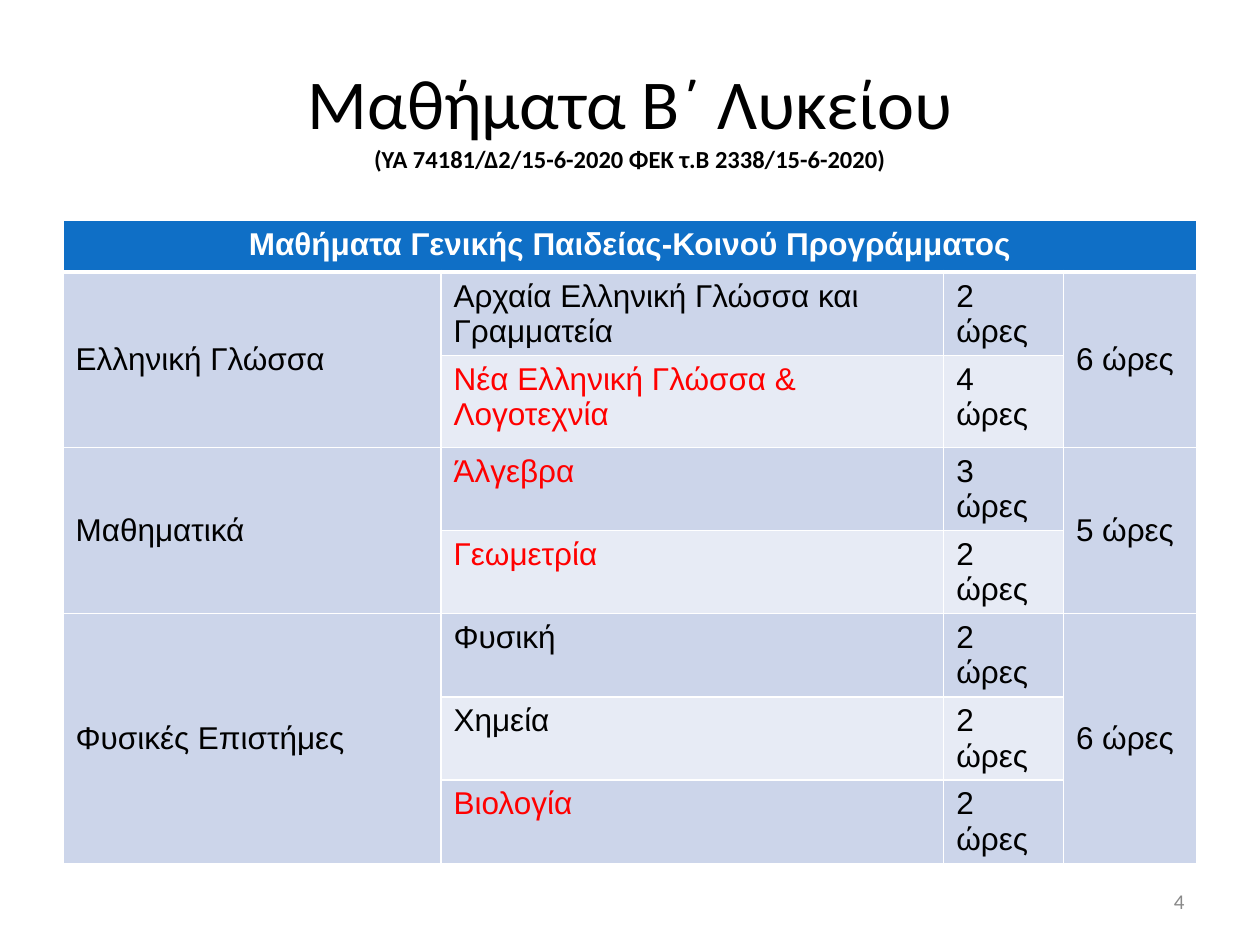
from lxml import etree
from pptx import Presentation
from pptx.dml.color import RGBColor
from pptx.enum.text import MSO_ANCHOR, PP_ALIGN
from pptx.oxml.ns import qn
from pptx.util import Inches, Pt

CENTER, RIGHT = PP_ALIGN.CENTER, PP_ALIGN.RIGHT
TOP, MIDDLE = MSO_ANCHOR.TOP, MSO_ANCHOR.MIDDLE

BLACK = RGBColor(0x00, 0x00, 0x00)
WHITE = RGBColor(0xFF, 0xFF, 0xFF)
RED = RGBColor(0xFF, 0x00, 0x00)
GRAY = RGBColor(0x89, 0x89, 0x89)
HEADER_BLUE = RGBColor(0x0F, 0x6F, 0xC6)
BAND_DARK = RGBColor(0xCC, 0xD5, 0xEA)
BAND_LIGHT = RGBColor(0xE7, 0xEB, 0xF5)

COLUMN_WIDTHS = [3, 3.99, 0.95, 1.06]
ROW_HEIGHTS = [0.41, 0.5, 0.73] + [0.41] * 5

# Subject area, total hours, courses (name, hours, colour)
SUBJECT_AREAS = [
    ("Ελληνική Γλώσσα", "6 ώρες", [
        ("Αρχαία Ελληνική Γλώσσα και Γραμματεία", "2 ώρες", BLACK),
        ("Νέα Ελληνική Γλώσσα & Λογοτεχνία", "4 ώρες", RED)]),
    ("Μαθηματικά", "5 ώρες", [
        ("Άλγεβρα", "3 ώρες", RED),
        ("Γεωμετρία", "2 ώρες", RED)]),
    ("Φυσικές Επιστήμες", "6 ώρες", [
        ("Φυσική", "2 ώρες", BLACK),
        ("Χημεία", "2 ώρες", BLACK),
        ("Βιολογία", "2 ώρες", RED)]),
]


def add_text(paragraph, text, size, color, font="Calibri", bold=False):
    run = paragraph.add_run()
    run.text = text
    font_format = {"name": font, "size": Pt(size), "bold": bold}
    for attribute, value in font_format.items():
        setattr(run.font, attribute, value)
    run.font.color.rgb = color


def format_cell(cell, fill, bottom_width=1):
    """Fill the cell and give it white borders."""
    cell.fill.solid()
    cell.fill.fore_color.rgb = fill
    properties = cell._tc.get_or_add_tcPr()
    widths = {"a:lnL": 1, "a:lnR": 1, "a:lnT": 1, "a:lnB": bottom_width}
    for position, (side, width) in enumerate(widths.items()):
        line = etree.Element(qn(side), w=str(Pt(width)))
        line_fill = etree.SubElement(line, qn("a:solidFill"))
        etree.SubElement(line_fill, qn("a:srgbClr"), val=str(WHITE))
        properties.insert(position, line)


presentation = Presentation()
presentation.slide_width = Inches(10)
presentation.slide_height = Inches(7.5)
slide = presentation.slides.add_slide(presentation.slide_layouts[5])

# Title
title = slide.shapes.title
title_box = {"left": 0.5, "top": 0.3, "width": 9, "height": 1.25}
for attribute, value in title_box.items():
    setattr(title, attribute, Inches(value))
title.text_frame.vertical_anchor = MIDDLE
heading = title.text_frame.paragraphs[0]
heading.alignment = CENTER
add_text(heading, "Μαθήματα Β΄ Λυκείου", 40, BLACK)
heading.add_line_break()
add_text(heading, "(ΥΑ 74181/Δ2/15-6-2020 ΦΕΚ τ.Β 2338/15-6-2020)", 14, BLACK, bold=True)

# Timetable
timetable = slide.shapes.add_table(
    len(ROW_HEIGHTS), len(COLUMN_WIDTHS),
    Inches(0.5), Inches(1.75), Inches(9), Inches(sum(ROW_HEIGHTS))).table
for column, width in zip(timetable.columns, COLUMN_WIDTHS):
    column.width = Inches(width)
for row, height in zip(timetable.rows, ROW_HEIGHTS):
    row.height = Inches(height)

for cell in timetable.rows[0].cells:
    format_cell(cell, HEADER_BLUE, bottom_width=3)
header = timetable.cell(0, 0)
header.merge(timetable.cell(0, 3))
header_line = header.text_frame.paragraphs[0]
header_line.alignment = CENTER
add_text(header_line, "Μαθήματα Γενικής Παιδείας-Κοινού Προγράμματος", 18, WHITE, "Arial", True)

first_row = 1
for area, total_hours, courses in SUBJECT_AREAS:
    last_row = first_row + len(courses) - 1
    for row, (course, hours, color) in enumerate(courses, first_row):
        band = BAND_DARK if row % 2 else BAND_LIGHT
        for column, fill in enumerate([BAND_DARK, band, band, BAND_DARK]):
            format_cell(timetable.cell(row, column), fill)
        for column, text, text_color in [(1, course, color), (2, hours, BLACK)]:
            cell = timetable.cell(row, column)
            cell.vertical_anchor = TOP
            add_text(cell.text_frame.paragraphs[0], text, 18, text_color, "Arial")
    for column, text in [(0, area), (3, total_hours)]:
        cell = timetable.cell(first_row, column)
        cell.merge(timetable.cell(last_row, column))
        cell.vertical_anchor = MIDDLE
        add_text(cell.text_frame.paragraphs[0], text, 18, BLACK, "Arial")
    first_row = last_row + 1

# Page number
page_number = slide.shapes.add_textbox(
    Inches(7.17), Inches(6.95), Inches(2.33), Inches(0.4)).text_frame
page_number.word_wrap = True
page_number.vertical_anchor = MIDDLE
page_number.paragraphs[0].alignment = RIGHT
add_text(page_number.paragraphs[0], "4", 12, GRAY)

presentation.save("out.pptx")
